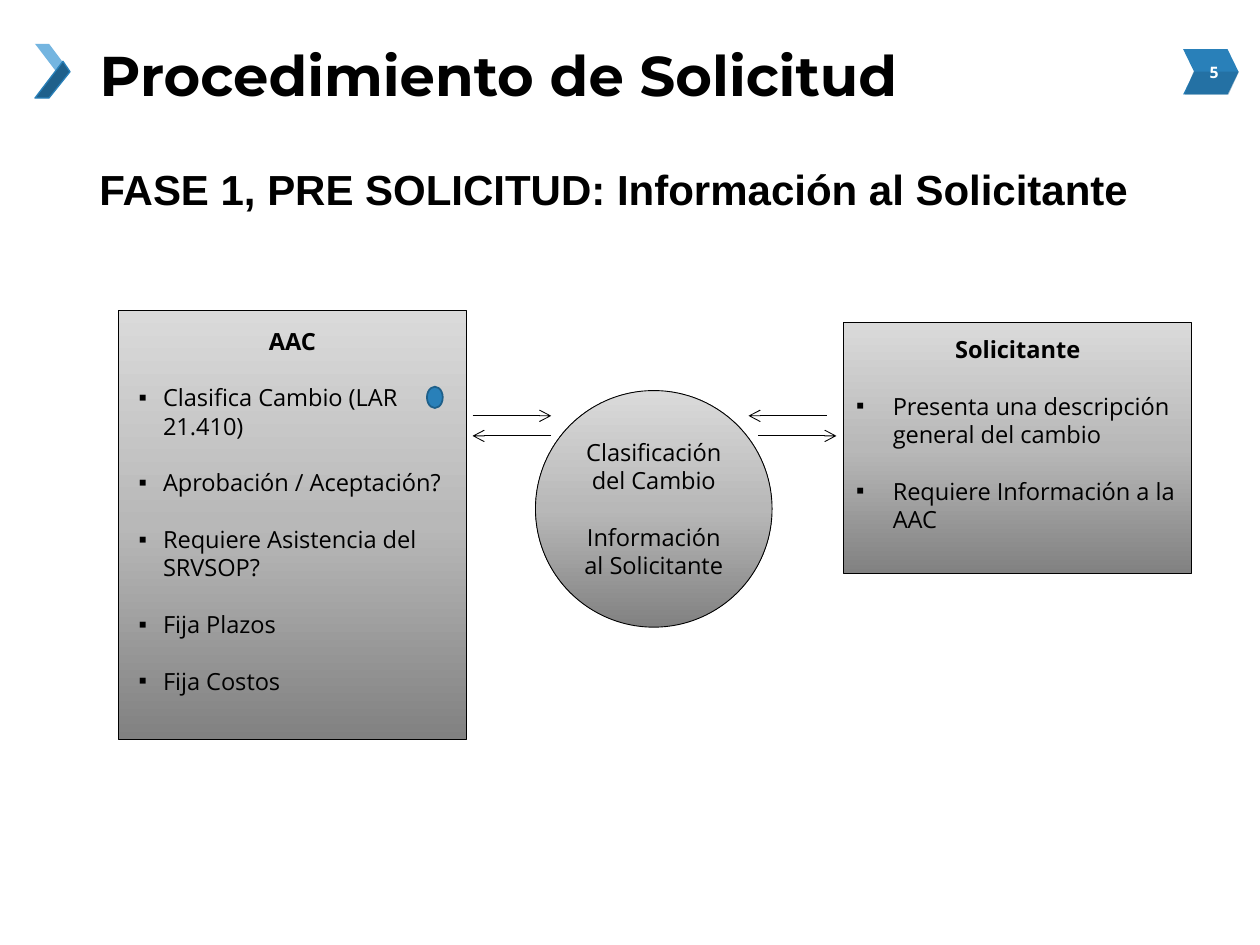
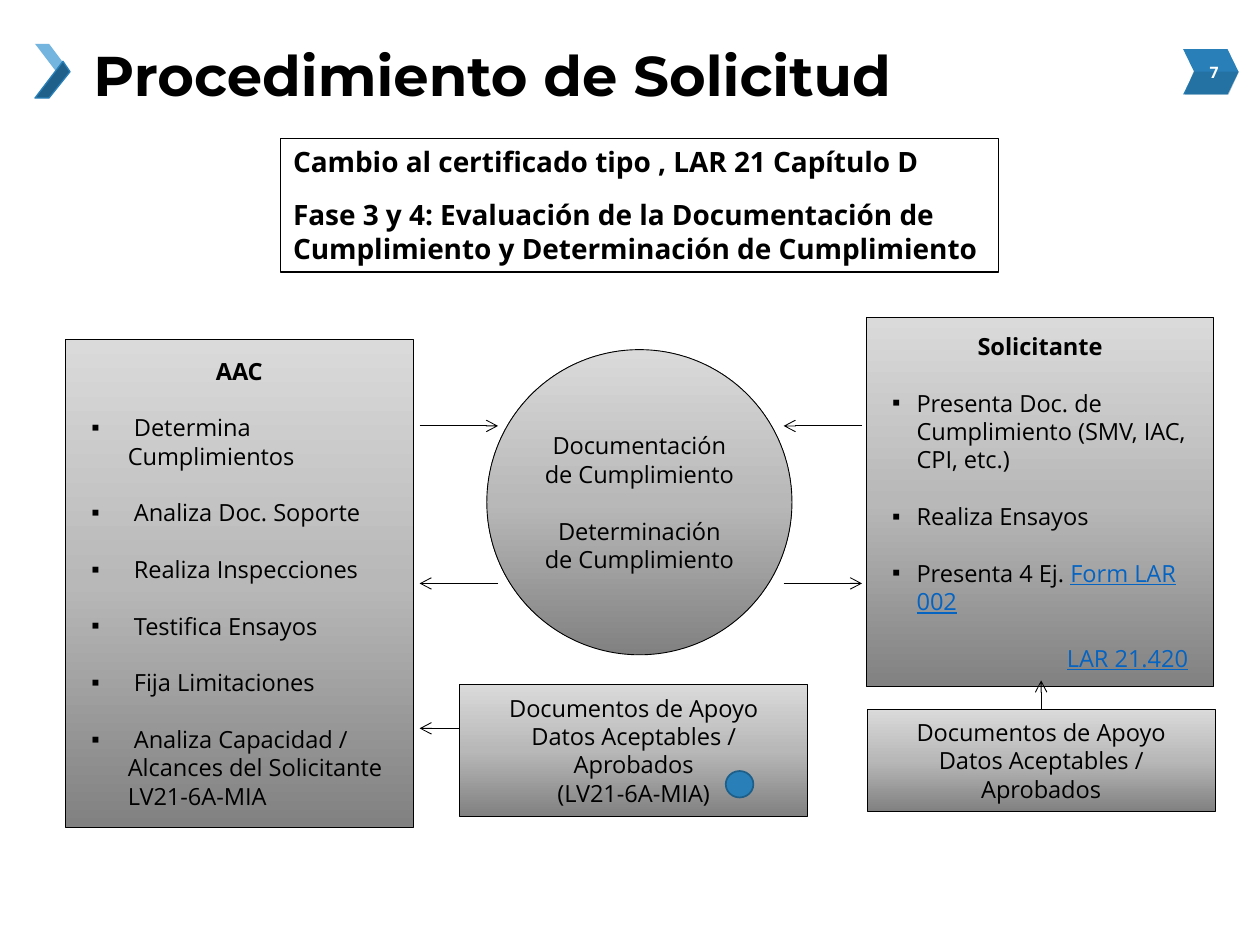
import copy

import pptx
import pptx.dml.color
import pptx.enum.dml
import pptx.enum.shapes
import pptx.enum.text
import pptx.oxml
import pptx.oxml.ns
import pptx.util

Pt = pptx.util.Pt
qn = pptx.oxml.ns.qn
SHAPES = pptx.enum.shapes.MSO_SHAPE
ALIGN = pptx.enum.text.PP_ALIGN
ANCHOR = pptx.enum.text.MSO_ANCHOR

BLACK, WHITE, LINK = "000000", "FFFFFF", "0563C1"
SKY, BLUE, NAVY, RIM = "74B5E0", "2980B9", "1F608B", "1E5F89"
GRADIENT = [(0, "818181"), (0.5, "B8B8B8"), (1, "DADADA")]
BODY_FONT, TITLE_FONT = "Open Sans", "Montserrat"
BODY_SIZE = 13.5
BLANK_LINE = 16.2
PANEL_WIDTH = 198.7


def rgb(code):
    return pptx.dml.color.RGBColor.from_string(code)


def add_element(parent, tag, **attributes):
    element = pptx.oxml.parse_xml(f"<{tag} {pptx.oxml.ns.nsdecls('a')}/>")
    for name, value in attributes.items():
        element.set(name, str(value))
    parent.append(element)
    return element


def add_span(para, text, size=BODY_SIZE, font=BODY_FONT, color=BLACK, bold=False, underline=False):
    for index, line in enumerate(text.split("\n")):
        if index:
            para.add_line_break()
        span = para.add_run()
        span.text = line
        span.font.size, span.font.name = Pt(size), font
        span.font.bold, span.font.underline = bold, underline
        span.font.color.rgb = rgb(color)


def write(frame, text, align=ALIGN.LEFT, before=0, indent=0, spacing=1.0, **style):
    para = frame.paragraphs[0]
    if para.runs:
        para = frame.add_paragraph()
    para.alignment, para.space_before, para.line_spacing = align, Pt(before), spacing
    if indent:
        properties = para._p.get_or_add_pPr()
        properties.set("marL", str(Pt(indent)))
        properties.set("indent", str(-Pt(indent)))
        add_element(properties, "a:buFont", typeface="Arial")
        add_element(properties, "a:buChar", char="▪")
    add_span(para, text, **style)
    return para


def set_frame(shape, anchor=ANCHOR.MIDDLE, inset=7.2, top=3.6, bottom=3.6):
    frame = shape.text_frame
    frame.word_wrap, frame.vertical_anchor = True, anchor
    frame.margin_left = frame.margin_right = Pt(inset)
    frame.margin_top, frame.margin_bottom = Pt(top), Pt(bottom)
    return frame


def paint(shape, fill=None, line=None, width=0.5):
    shape.shadow.inherit = False
    if fill:
        shape.fill.solid()
        shape.fill.fore_color.rgb = rgb(fill)
    else:
        shape.fill.background()
    if line:
        shape.line.color.rgb = rgb(line)
        shape.line.width = Pt(width)
    else:
        shape.line.fill.background()
    return shape


def add_shape(page, kind, box, **style):
    return paint(page.shapes.add_shape(kind, *map(Pt, box)), **style)


def add_outline(page, points, **style):
    builder = page.shapes.build_freeform(*points[0], scale=12700)
    builder.add_line_segments(points[1:], close=True)
    return paint(builder.convert_to_shape(), **style)


def add_gradient_shape(page, kind, box):
    shape = add_shape(page, kind, box, line=BLACK)
    shape.fill.gradient()
    shape.fill.gradient_angle = 90
    stop_list = shape._element.spPr.find(".//" + qn("a:gsLst"))
    stop_list.insert(1, copy.deepcopy(stop_list[0]))
    for stop, (position, color) in zip(shape.fill.gradient_stops, GRADIENT):
        stop.position = position
        stop.color.rgb = rgb(color)
    return shape


def add_arrow(page, start, end):
    arrow = page.shapes.add_connector(
        pptx.enum.shapes.MSO_CONNECTOR.STRAIGHT, *map(Pt, (*start, *end)))
    arrow.line.color.rgb = rgb(BLACK)
    arrow.line.width = Pt(0.5)
    add_element(arrow.line._get_or_add_ln(), "a:tailEnd", type="arrow")
    add_element(arrow._element.spPr, "a:effectLst")
    return arrow


def add_arrow_pair(page, left, tops, width, rightward_first):
    for index, top in enumerate(tops):
        ends = [(left, top), (left + width, top)]
        if (index == 0) != rightward_first:
            ends.reverse()
        add_arrow(page, *ends)


def add_panel(page, box, heading, items, indent, inset, tail=0):
    panel = add_gradient_shape(page, SHAPES.RECTANGLE, box)
    frame = set_frame(panel, inset=inset, bottom=3.6 + tail)
    write(frame, heading, align=ALIGN.CENTER, bold=True)
    for item in items:
        write(frame, item, before=BLANK_LINE, indent=indent)
    return panel


def add_circle(page, left, top, diameter, topics):
    circle = add_gradient_shape(page, SHAPES.OVAL, (left, top, diameter, diameter))
    frame = set_frame(circle, inset=5)
    for index, topic in enumerate(topics):
        write(frame, topic, align=ALIGN.CENTER, before=BLANK_LINE if index else 0)


def add_support_box(page, left, top, height, lines):
    support = add_gradient_shape(page, SHAPES.RECTANGLE, (left, top, PANEL_WIDTH, height))
    frame = set_frame(support, inset=14.4)
    for line in lines:
        write(frame, line, align=ALIGN.CENTER)
    return support


def add_dot(page, box):
    add_shape(page, SHAPES.OVAL, box, fill=BLUE, line=RIM, width=1)


def add_title_mark(page, left, top):
    def place(points):
        return [(left + x, top + y) for x, y in points]

    add_outline(page, place([(0, 0), (15.8, 20.9), (19.4, 15.8), (7.9, 0)]), fill=SKY)
    add_outline(page, place([(0, 31), (15.8, 10.1), (19.4, 15.8), (7.9, 31)]),
                fill=NAVY, line=BLUE, width=0.75)


def add_page_badge(page, left, top, number):
    chevron = add_shape(page, SHAPES.CHEVRON, (left, top, 31.7, 25.9), fill=BLUE)
    chevron.adjustments[0] = 0.243
    points = [(6.2, 13), (31.7, 13), (25.7, 25.4), (0.5, 25.4)]
    shade = add_outline(page, [(left + x, top + y) for x, y in points], fill=NAVY)
    color = shade._element.spPr.find(".//" + qn("a:srgbClr"))
    add_element(color, "a:alpha", val=45000)
    label = page.shapes.add_textbox(*map(Pt, (left - 1.4, top + 2.2, 38.2, 21.6)))
    write(set_frame(label), number, align=ALIGN.CENTER, size=9, color=WHITE, bold=True)


def start_page(deck, number, title_left, title_top, spacing):
    page = deck.slides.add_slide(deck.slide_layouts[5])
    add_title_mark(page, 20.2, 25.2)
    add_page_badge(page, 676.1, 28.1, number)
    title = page.shapes.title
    title.left, title.top, title.width, title.height = map(Pt, (title_left, title_top, 648, 90))
    write(set_frame(title), "Procedimiento de Solicitud", spacing=spacing,
          size=32, font=TITLE_FONT, bold=True)
    return page


def build_request_page(deck):
    page = start_page(deck, "5", 49.7, 0, 0.9)
    phase = page.shapes.add_textbox(*map(Pt, (49.7, 90, 622.8, 36)))
    write(set_frame(phase, anchor=ANCHOR.TOP), "FASE 1, PRE SOLICITUD: Información al Solicitante",
          size=24, font="Arial", bold=True)
    add_panel(page, (67.7, 177.5, PANEL_WIDTH, 245), "AAC", [
        "Clasifica Cambio (LAR 21.410)",
        "Aprobación / Aceptación?",
        "Requiere Asistencia del SRVSOP?",
        "Fija Plazos",
        "Fija Costos",
    ], indent=14, inset=11.5, tail=BLANK_LINE)
    add_panel(page, (482.2, 184.5, PANEL_WIDTH, 143.3), "Solicitante", [
        "Presenta una descripción general del cambio",
        "Requiere Información a la AAC",
    ], indent=20.9, inset=7.2, tail=BLANK_LINE)
    add_arrow_pair(page, 270, [237.6, 249.1], 45, True)
    add_circle(page, 306, 223.2, 135.2, ["Clasificación del Cambio", "Información al Solicitante"])
    add_arrow(page, (472.5, 237.6), (427.7, 237.6))
    add_arrow(page, (433.3, 249.1), (478, 249.1))
    add_dot(page, (244, 221, 9, 12.2))


def build_evaluation_page(deck):
    page = start_page(deck, "7", 46.1, -2.9, 1.0)
    add_panel(page, (37.4, 193.9, PANEL_WIDTH, 278.8), "AAC", [
        " Determina Cumplimientos",
        " Analiza Doc. Soporte",
        " Realiza Inspecciones ",
        " Testifica Ensayos",
        " Fija Limitaciones",
        " Analiza Capacidad / Alcances del Solicitante LV21-6A-MIA",
    ], indent=20.9, inset=14.8)
    applicant = add_panel(page, (495, 181.4, PANEL_WIDTH, 211), "Solicitante", [
        "Presenta Doc. de Cumplimiento (SMV, IAC, CPI, etc.)",
        "Realiza Ensayos",
        "Presenta 4 Ej. ",
    ], indent=14, inset=14.8)
    frame = applicant.text_frame
    add_span(frame.paragraphs[-1], "Form LAR 002", color=LINK, underline=True)
    write(frame, "LAR 21.420", align=ALIGN.RIGHT, before=BLANK_LINE, color=LINK, underline=True)

    banner = add_shape(page, SHAPES.RECTANGLE, (160.4, 79.2, 410.4, 76.3), line=BLACK, width=0.75)
    frame = set_frame(banner, anchor=ANCHOR.TOP)
    write(frame, "Cambio al certificado tipo , LAR 21 Capítulo D", size=16, bold=True)
    write(frame, "Fase 3 y 4: Evaluación de la Documentación de Cumplimiento "
          "y Determinación de Cumplimiento", before=11, size=16, bold=True)

    add_circle(page, 278.2, 199.8, 174.4,
               ["Documentación\nde Cumplimiento", "Determinación\nde Cumplimiento"])
    add_arrow_pair(page, 239.8, [243.4, 333.4], 44.8, True)
    add_arrow_pair(page, 447.8, [243.4, 333.4], 44.8, False)

    evidence = add_support_box(page, 495.6, 405.4, 58.2,
                               ["Documentos de Apoyo", "Datos Aceptables / Aprobados"])
    center = 495.6 + PANEL_WIDTH / 2
    add_arrow(page, (center, 405.4), (center, 388.8)).begin_connect(evidence, 0)
    add_arrow(page, (262.1, 416.2), (239.8, 416.2))
    add_support_box(page, 262.8, 391, 75.4,
                    ["Documentos de Apoyo\nDatos Aceptables / Aprobados", "(LV21-6A-MIA)"])
    add_dot(page, (414.7, 440.6, 15.8, 15.1))


def main():
    deck = pptx.Presentation()
    deck.slide_width, deck.slide_height = Pt(720), Pt(540)
    build_request_page(deck)
    build_evaluation_page(deck)
    deck.save("out.pptx")


if __name__ == "__main__":
    main()
